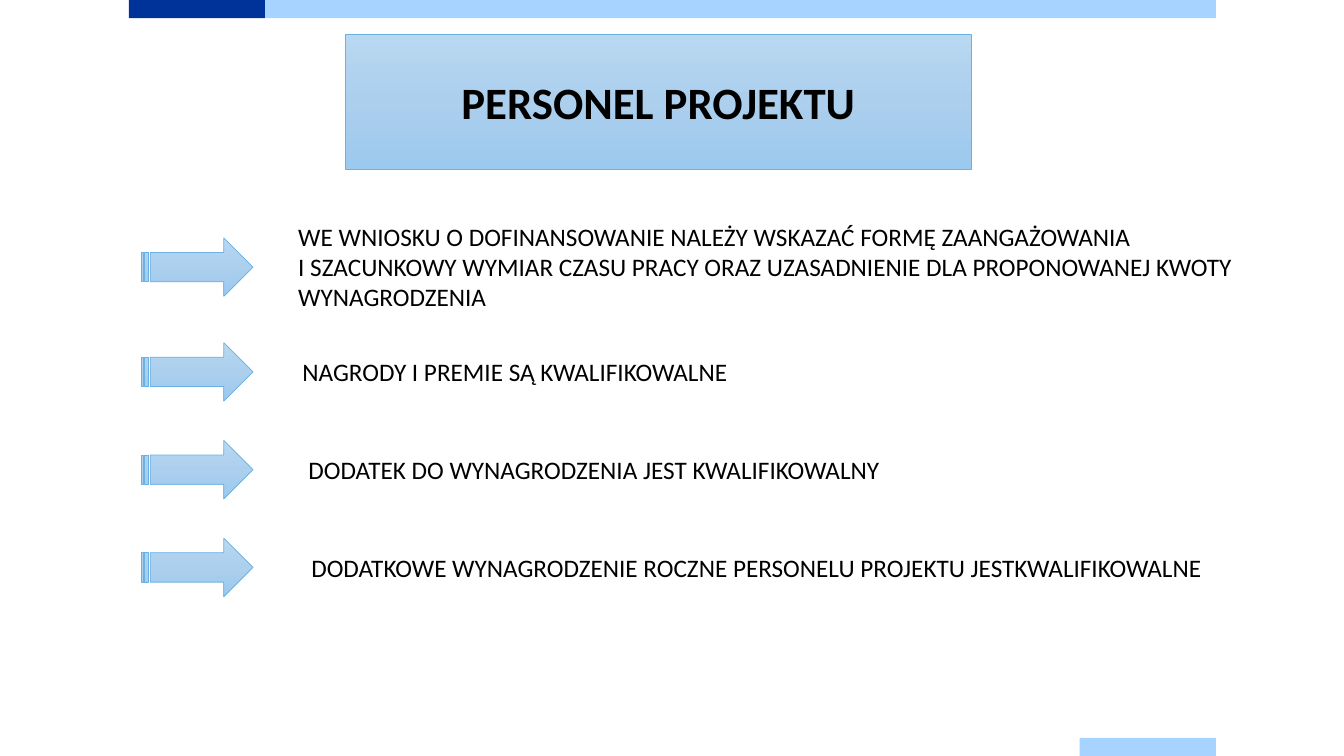
from copy import deepcopy
from typing import NamedTuple

from pptx import Presentation
from pptx import util as u
from pptx.dml import color
from pptx.enum import shapes, text
from pptx.oxml import ns

COLORS = {"navy": "003399", "sky": "A6D3FF", "top": "B9D8F1", "middle": "ABCFED",
          "bottom": "9CC9EE", "outline": "6BB1E2", "ink": "000000"}
GRADIENT = {0: "top", 0.5: "middle", 1: "bottom"}
ARROW_LEFT, ARROW_WIDTH, ARROW_HEIGHT = 10.5, 8.33, 7.73
FIRST_CENTER, SECOND_CENTER, ROW_STEP = 35.33, 49.2, 12.93


class Box(NamedTuple):
    """Left, top, width and height in percent of the slide's size."""
    left: float
    top: float
    width: float
    height: float


class Bar(NamedTuple):
    box: Box
    color: str


class Point(NamedTuple):
    left: float
    width: float
    height: float
    wording: str


BARS = [
    Bar(Box(9.6, 0, 10.13, 2.4), "navy"),
    Bar(Box(19.73, 0, 70.74, 2.4), "sky"),
    Bar(Box(80.34, 97.6, 10.13, 2.4), "sky"),
]
TITLE = Box(25.73, 4.53, 46.51, 17.87)
POINTS = [
    Point(21.45, 72.47, 13.47,
          "WE WNIOSKU O DOFINANSOWANIE NALEŻY WSKAZAĆ FORMĘ ZAANGAŻOWANIA \v"
          "I SZACUNKOWY WYMIAR CZASU PRACY ORAZ UZASADNIENIE DLA "
          "PROPONOWANEJ KWOTY WYNAGRODZENIA"),
    Point(21.76, 55.74, 5.33, "NAGRODY I PREMIE SĄ KWALIFIKOWALNE"),
    Point(22.21, 53.19, 5.33, "DODATEK DO WYNAGRODZENIA JEST KWALIFIKOWALNY"),
    Point(22.43, 67.74, 5.33,
          "DODATKOWE WYNAGRODZENIE ROCZNE PERSONELU PROJEKTU JESTKWALIFIKOWALNE"),
]

prs = Presentation()
prs.slide_width, prs.slide_height = u.Inches(13.33), u.Inches(7.5)
slide = prs.slides.add_slide(prs.slide_layouts[6])


def rgb(name: str) -> color.RGBColor:
    return color.RGBColor.from_string(COLORS[name])


def place(box: Box) -> list[int]:
    sizes = (prs.slide_width, prs.slide_height) * 2
    return [round(share * size / 100) for share, size in zip(box, sizes)]


def add_shape(kind: shapes.MSO_SHAPE, box: Box):
    s = slide.shapes.add_shape(kind, *place(box))
    s.shadow.inherit = False
    return s


def add_bar(bar: Bar) -> None:
    s = add_shape(shapes.MSO_SHAPE.RECTANGLE, bar.box)
    s.fill.solid()
    s.fill.fore_color.rgb = rgb(bar.color)
    s.line.fill.background()


def add_gradient_shape(kind: shapes.MSO_SHAPE, box: Box):
    s = add_shape(kind, box)
    s.fill.gradient()
    s.fill.gradient_angle = 270
    stops = s._element.spPr.find(ns.qn("a:gradFill")).find(ns.qn("a:gsLst"))
    stops.insert(1, deepcopy(stops[0]))
    for stop, (position, name) in zip(s.fill.gradient_stops, GRADIENT.items()):
        stop.position = position
        stop.color.rgb = rgb(name)
    s.line.color.rgb = rgb("outline")
    s.line.width = u.Pt(0.5)
    return s


def write(tf, wording: str, size: int, bold: bool, align: text.PP_ALIGN) -> None:
    tf.word_wrap = True
    p = tf.paragraphs[0]
    p.text = wording
    p.alignment = align
    style = {"name": "Calibri", "size": u.Pt(size), "bold": bold}
    for r in p.runs:
        for key, value in style.items():
            setattr(r.font, key, value)
        r.font.color.rgb = rgb("ink")


def add_point(point: Point, center: float) -> None:
    """Draw an arrow and its wording, both centred on one height."""
    add_gradient_shape(shapes.MSO_SHAPE.STRIPED_RIGHT_ARROW,
                       Box(ARROW_LEFT, center - ARROW_HEIGHT / 2, ARROW_WIDTH, ARROW_HEIGHT))
    box = Box(point.left, center - point.height / 2, point.width, point.height)
    tf = slide.shapes.add_textbox(*place(box)).text_frame
    tf.auto_size = text.MSO_AUTO_SIZE.SHAPE_TO_FIT_TEXT
    write(tf, point.wording, 18, False, text.PP_ALIGN.LEFT)


def main() -> None:
    for bar in BARS:
        add_bar(bar)
    title = add_gradient_shape(shapes.MSO_SHAPE.RECTANGLE, TITLE).text_frame
    title.vertical_anchor = text.MSO_ANCHOR.MIDDLE
    write(title, "PERSONEL PROJEKTU", 32, True, text.PP_ALIGN.CENTER)
    centers = [FIRST_CENTER] + [SECOND_CENTER + ROW_STEP * i for i in range(len(POINTS) - 1)]
    for point, center in zip(POINTS, centers):
        add_point(point, center)
    prs.save("out.pptx")


if __name__ == "__main__":
    main()
